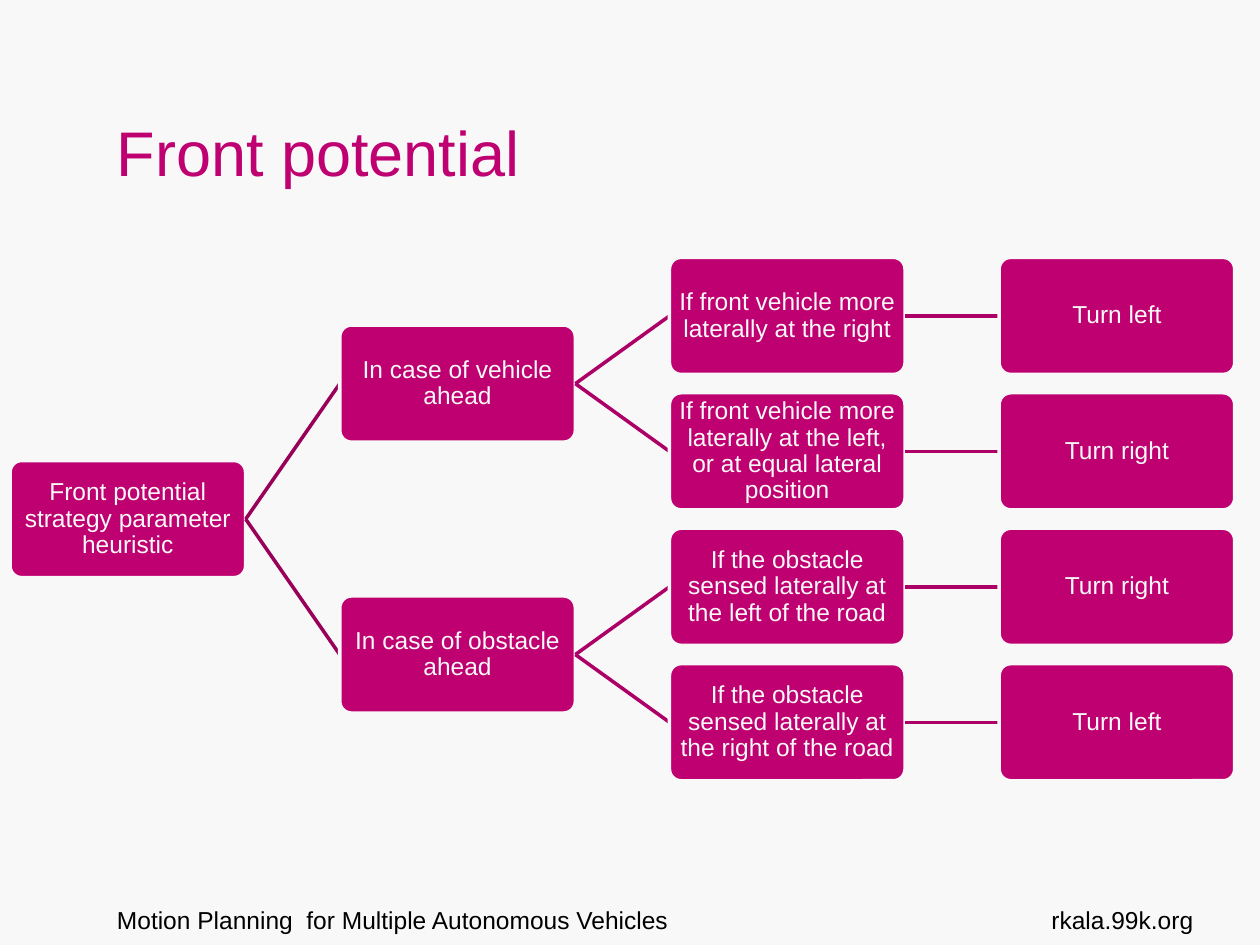
from lxml import etree
from pptx import Presentation
from pptx.dml.color import RGBColor
from pptx.enum.shapes import MSO_CONNECTOR, MSO_SHAPE
from pptx.enum.text import MSO_ANCHOR as ANCHOR, PP_ALIGN as ALIGN
from pptx.oxml.ns import qn
from pptx.util import Inches, Pt

MAGENTA, PAPER, BLACK = "BF0071", "F8F8F8", "000000"
LINK_COLORS = ["99005A", "AD0067", "AD0067"]  # by depth of the parent
NODE_W, NODE_H = 1.87, 0.93

# Each node is (text, children)
TREE = ("Front potential strategy parameter heuristic", [
    ("In case of vehicle ahead", [
        ("If front vehicle more laterally at the right", [("Turn left", [])]),
        ("If front vehicle more laterally at the left, or at equal lateral position",
         [("Turn right", [])]),
    ]),
    ("In case of obstacle ahead", [
        ("If the obstacle sensed laterally at the left of the road", [("Turn right", [])]),
        ("If the obstacle sensed laterally at the right of the road", [("Turn left", [])]),
    ]),
])


def rgb(color):
    return RGBColor.from_string(color)


def set_text(sp, text, size, color, align):
    p = sp.text_frame.paragraphs[0]
    p.text = text
    p.alignment = align
    p.font.name = "Arial"
    p.font.size = Pt(size)
    p.font.color.rgb = rgb(color)
    return p


def add_label(slide, box, text, size=14, color=BLACK, align=ALIGN.LEFT, anchor=ANCHOR.TOP):
    sp = slide.shapes.add_textbox(*map(Inches, box))
    sp.text_frame.word_wrap = True
    sp.text_frame.vertical_anchor = anchor
    set_text(sp, text, size, color, align)


def add_node(slide, x, mid, text):
    sp = slide.shapes.add_shape(MSO_SHAPE.ROUNDED_RECTANGLE, Inches(x), Inches(mid - NODE_H / 2),
                                Inches(NODE_W), Inches(NODE_H))
    sp.adjustments[0] = 0.1
    sp.shadow.inherit = False
    sp.fill.solid()
    sp.fill.fore_color.rgb = rgb(MAGENTA)
    sp.line.color.rgb = rgb(PAPER)
    sp.line.width = Pt(2)
    tf = sp.text_frame
    tf.word_wrap = True
    tf.vertical_anchor = ANCHOR.MIDDLE
    tf.margin_left = tf.margin_right = tf.margin_top = tf.margin_bottom = Inches(0.04)
    set_text(sp, text, 14, PAPER, ALIGN.CENTER).line_spacing = 0.9


def add_link(slide, x1, y1, x2, y2, color):
    link = slide.shapes.add_connector(MSO_CONNECTOR.STRAIGHT, *map(Inches, (x1, y1, x2, y2)))
    link.line.color.rgb = rgb(color)
    link.line.width = Pt(2)
    etree.SubElement(link._element.spPr, qn("a:effectLst"))


def count_leaves(node):
    return sum(map(count_leaves, node[1])) or 1


def add_tree(slide, node, box, col_step, depth=0):
    """Draw a node centred on the left of its box and share the height among its children."""
    text, children = node
    x, y, w, h = box
    mid = y + h / 2
    add_node(slide, x, mid, text)
    row_h = h / count_leaves(node)
    for child in children:
        child_h = row_h * count_leaves(child)
        child_x = x + col_step
        add_link(slide, x + NODE_W, mid, child_x, y + child_h / 2, LINK_COLORS[depth])
        add_tree(slide, child, (child_x, y, w - col_step, child_h), col_step, depth + 1)
        y += child_h


def main():
    prs = Presentation()
    prs.slide_width, prs.slide_height = Inches(10), Inches(7.5)
    slide = prs.slides.add_slide(prs.slide_layouts[6])
    slide.background.fill.solid()
    slide.background.fill.fore_color.rgb = rgb(PAPER)

    add_label(slide, (0.83, 7.13, 6.93, 0.52), "Motion Planning  for Multiple Autonomous Vehicles")
    add_label(slide, (0.83, 0.3, 6.77, 1.25), "Front potential", 36, MAGENTA, anchor=ANCHOR.BOTTOM)
    add_label(slide, (8.07, 7.13, 1.5, 0.52), "rkala.99k.org", align=ALIGN.RIGHT)

    tree_box = (0.08, 1.97, 9.72, 4.3)
    add_tree(slide, TREE, tree_box, col_step=(tree_box[2] - NODE_W) / 3)
    prs.save("out.pptx")


if __name__ == "__main__":
    main()
